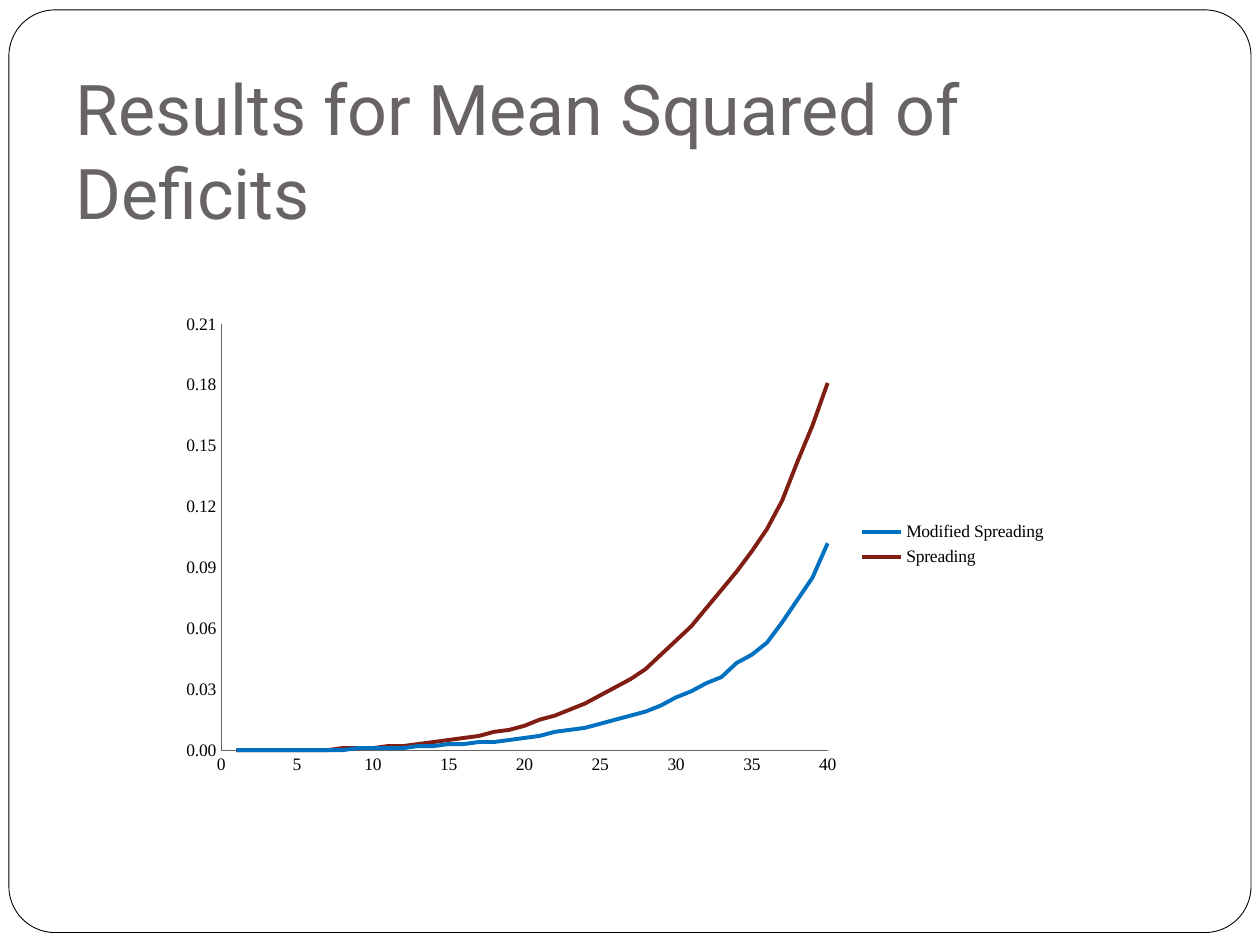
from lxml.etree import SubElement
from pptx import Presentation
from pptx.chart.data import XyChartData
from pptx.dml.color import RGBColor
from pptx.enum.chart import XL_CHART_TYPE, XL_LEGEND_POSITION, XL_TICK_MARK
from pptx.enum.shapes import MSO_SHAPE
from pptx.enum.text import MSO_ANCHOR, MSO_AUTO_SIZE, PP_ALIGN
from pptx.oxml.ns import qn
from pptx.util import Cm, Pt

TITLE = ["Results for Mean Squared of", "Deficits"]
SERIES = [
    ("Modified Spreading", "0070C0", [
        0, 0, 0, 0, 0, 0, 0, 0, 0.001, 0.001,
        0.001, 0.001, 0.002, 0.002, 0.003, 0.003, 0.004, 0.004, 0.005, 0.006,
        0.007, 0.009, 0.01, 0.011, 0.013, 0.015, 0.017, 0.019, 0.022, 0.026,
        0.029, 0.033, 0.036, 0.043, 0.047, 0.053, 0.063, 0.074, 0.085, 0.102]),
    ("Spreading", "801E14", [
        0, 0, 0, 0, 0, 0, 0, 0.001, 0.001, 0.001,
        0.002, 0.002, 0.003, 0.004, 0.005, 0.006, 0.007, 0.009, 0.01, 0.012,
        0.015, 0.017, 0.02, 0.023, 0.027, 0.031, 0.035, 0.04, 0.047, 0.054,
        0.061, 0.07, 0.079, 0.088, 0.098, 0.109, 0.123, 0.142, 0.16, 0.181]),
]
AXES = {
    "category_axis": {"maximum_scale": 40, "major_unit": 5},
    "value_axis": {"maximum_scale": 0.21, "major_unit": 0.03},
}
AXIS = {"minimum_scale": 0, "has_major_gridlines": False,
        "major_tick_mark": XL_TICK_MARK.NONE, "minor_tick_mark": XL_TICK_MARK.NONE}
PLOT = {"layoutTarget": "inner", "xMode": "edge", "yMode": "edge",
        "x": 0.06, "y": 0.04, "w": 0.68, "h": 0.89}


def put(item, form):
    for key, val in form.items():
        setattr(item, key, val)


def hue(form, code):
    form.rgb = RGBColor.from_string(code)


def ink(line, code, size):
    line.fill.solid()
    hue(line.fill.fore_color, code)
    line.width = Pt(size)


def box(left, top, width, height):
    return {"left": Cm(left), "top": Cm(top), "width": Cm(width), "height": Cm(height)}


deck = Presentation()
put(deck, {"slide_width": Cm(25.4), "slide_height": Cm(19.05)})
slide = deck.slides.add_slide(deck.slide_layouts[5])
shapes = slide.shapes

frame = shapes.add_shape(MSO_SHAPE.ROUNDED_RECTANGLE, *box(0.18, 0.2, 25.04, 18.6).values())
frame.adjustments[0] = 0.05
frame.shadow.inherit = False
frame.fill.solid()
hue(frame.fill.fore_color, "FFFFFF")
ink(frame.line, "000000", 0.5)

title = shapes.title
title.element.addprevious(frame.element)
put(title, box(1.27, 0.76, 22.86, 4.19))
put(title.text_frame, {
    "word_wrap": True, "auto_size": MSO_AUTO_SIZE.NONE, "vertical_anchor": MSO_ANCHOR.BOTTOM,
    "margin_left": Cm(0.25), "margin_right": Cm(0.25),
    "margin_top": Cm(0.13), "margin_bottom": Cm(0.25)})
para = title.text_frame.paragraphs[0]
para.alignment = PP_ALIGN.LEFT
for num, part in enumerate(TITLE):
    if num:
        para.add_line_break()
    run = para.add_run()
    run.text = part
    put(run.font, {"name": "Roboto", "size": Pt(40)})
    hue(run.font.color, "696464")

data = XyChartData()
for name, code, vals in SERIES:
    row = data.add_series(name)
    for x, y in enumerate(vals, 1):
        row.add_data_point(x, y)
chart = shapes.add_chart(XL_CHART_TYPE.XY_SCATTER_SMOOTH_NO_MARKERS,
                         *box(3.38, 6.15, 17.98, 9.65).values(), data).chart
put(chart, {"has_title": False, "has_legend": True})
put(chart.font, {"name": "Times New Roman", "size": Pt(10)})
hue(chart.font.color, "000000")
put(chart.legend, {"position": XL_LEGEND_POSITION.RIGHT, "include_in_layout": False})
chart.plots[0].vary_by_categories = False

for name, form in AXES.items():
    axis = getattr(chart, name)
    put(axis, AXIS | form)
    ink(axis.format.line, "696464", 0.75)
put(chart.category_axis.tick_labels, {"number_format": "General", "number_format_is_linked": False})
put(chart.value_axis.tick_labels, {"number_format": "0.00", "number_format_is_linked": False})

for line, (name, code, vals) in zip(chart.plots[0].series, SERIES):
    line.smooth = True
    ink(line.format.line, code, 2.25)

area = chart.plots[0]._element.getparent()
for old in area.findall(qn("c:layout")):
    area.remove(old)
lay = SubElement(area, qn("c:layout"))
area.insert(0, lay)
spot = SubElement(lay, qn("c:manualLayout"))
for key, val in PLOT.items():
    SubElement(spot, qn("c:" + key)).set("val", str(val))

deck.save("out.pptx")
